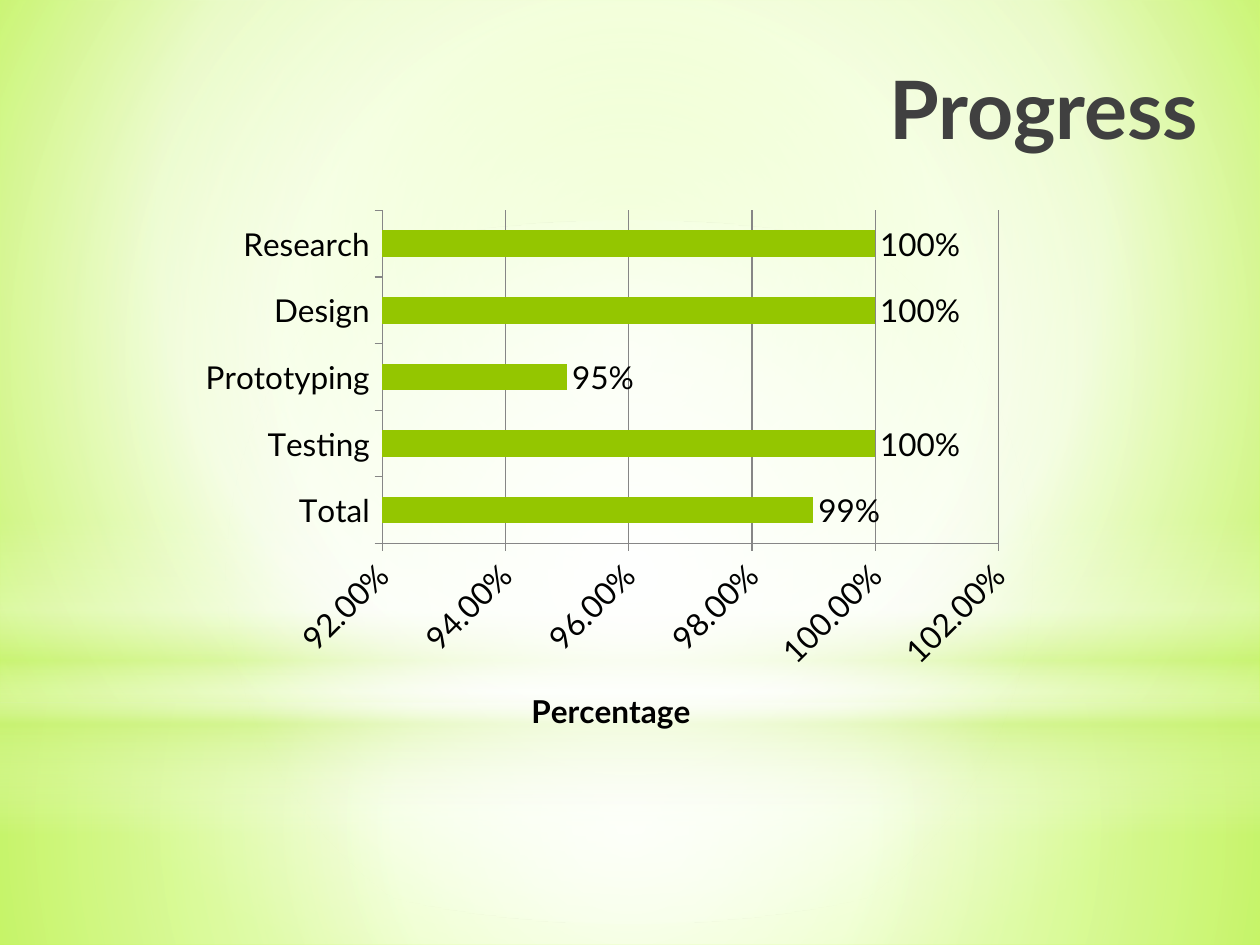
from typing import NamedTuple, Optional

from lxml import etree
from pptx import Presentation
from pptx.chart.data import CategoryChartData
from pptx.dml.color import RGBColor
from pptx.enum.chart import XL_CHART_TYPE, XL_LABEL_POSITION, XL_TICK_MARK
from pptx.enum.shapes import MSO_SHAPE
from pptx.enum.text import MSO_ANCHOR, PP_ALIGN
from pptx.oxml import parse_xml
from pptx.oxml.ns import nsdecls, qn
from pptx.util import Cm, Pt

FONT = "Lato"
GREEN, INK, BLACK, GRID = "94C600", "404040", "000000", "868686"
CENTRE = (50, 50, 50, 50)


class Stop(NamedTuple):
    pos: int
    color: str
    alpha: int = 100


class Glow(NamedTuple):
    shape: MSO_SHAPE
    top: float
    height: float
    stops: list[Stop]
    focus: Optional[tuple[int, int, int, int]] = CENTRE  # None: vertical gradient


GLOWS = [
    Glow(MSO_SHAPE.RECTANGLE, 14.17, 4.88,
         [Stop(0, "FFFFFF", 91), Stop(37, "FFFFFF", 76), Stop(100, "CAF278", 79)]),
    Glow(MSO_SHAPE.RECTANGLE, 0, 14.17,
         [Stop(0, "FFFFFF", 89), Stop(48, "FFFFFF", 62), Stop(100, "CAF278", 79)]),
    Glow(MSO_SHAPE.RECTANGLE, 10.46, 6.35,
         [Stop(0, "FFFFFF", 0), Stop(29, "FFFFFF", 30), Stop(45, "CAF278", 40),
          Stop(55, "FFFFFF", 26), Stop(65, "CAF278", 60), Stop(100, "FFFFFF", 0)], None),
    Glow(MSO_SHAPE.OVAL, 4.45, 14.17, [Stop(0, "FFFFFF"), Stop(56, "FFFFFF", 0)]),
]
PROGRESS = {"Total": 0.99, "Testing": 1, "Prototyping": 0.95, "Design": 1, "Research": 1}


def rgb(color: str) -> RGBColor:
    return RGBColor.from_string(color)


def set_gradient(parent, stops: list[Stop], focus) -> None:
    """Replace the solid fill inside parent with a gradient."""
    gs = "".join(
        f'<a:gs pos="{st.pos * 1000}"><a:srgbClr val="{st.color}">'
        f'<a:alpha val="{st.alpha * 1000}"/></a:srgbClr></a:gs>' for st in stops)
    if focus:
        sides = " ".join(f'{k}="{v * 1000}"' for k, v in zip("ltrb", focus))
        way = f'<a:path path="circle"><a:fillToRect {sides}/></a:path>'
    else:
        way = '<a:lin ang="5400000" scaled="0"/>'
    grad = parse_xml(f'<a:gradFill {nsdecls("a")} rotWithShape="1">'
                     f'<a:gsLst>{gs}</a:gsLst>{way}</a:gradFill>')
    parent.replace(parent.find(qn("a:solidFill")), grad)


def add_glow(s, glow: Glow, width: int) -> None:
    sp = s.shapes.add_shape(glow.shape, 0, Cm(glow.top), width, Cm(glow.height))
    sp.shadow.inherit = False
    sp.line.fill.background()
    sp.fill.solid()
    set_gradient(sp._element.spPr, glow.stops, glow.focus)


def style_font(font, size: float, color: str, bold: bool = False) -> None:
    font.name, font.size, font.bold = FONT, Pt(size), bold
    font.color.rgb = rgb(color)


def manual_layout(inner: bool = False, **values: float):
    """Build a chart layout from fractions of the chart's size."""
    layout = parse_xml(f'<c:layout {nsdecls("c")}><c:manualLayout/></c:layout>')
    settings = {"layoutTarget": "inner"} if inner else {}
    settings |= {"xMode": "edge", "yMode": "edge", **values}
    for tag, value in settings.items():
        etree.SubElement(layout[0], qn(f"c:{tag}")).set("val", str(value))
    return layout


def add_title(s, text: str) -> None:
    sp = s.shapes.title
    sp.left, sp.top, sp.width, sp.height = Cm(7.82), Cm(1.07), Cm(16.59), Cm(2.39)
    s.shapes._spTree.append(sp._element)  # in front of the glows
    tf = sp.text_frame
    tf.vertical_anchor = MSO_ANCHOR.TOP
    p = tf.paragraphs[0]
    p.alignment = PP_ALIGN.RIGHT
    r = p.add_run()
    r.text = text
    style_font(r.font, 46, INK, True)


def add_progress_chart(s) -> None:
    data = CategoryChartData(number_format="0%")
    data.categories = list(PROGRESS)
    data.add_series("Series 1", list(PROGRESS.values()))
    chart = s.shapes.add_chart(XL_CHART_TYPE.BAR_CLUSTERED, Cm(3.79), Cm(4.02),
                               Cm(17.02), Cm(11.19), data).chart
    chart.has_legend = chart.has_title = False
    style_font(chart.font, 18, BLACK)

    # Bars and their labels
    plot = chart.plots[0]
    plot.gap_width, plot.vary_by_categories = 150, False
    fill = plot.series[0].format.fill
    fill.solid()
    fill.fore_color.rgb = rgb(GREEN)
    labels = plot.series[0].data_labels
    labels.show_value = True
    labels.position = XL_LABEL_POSITION.OUTSIDE_END
    labels.number_format, labels.number_format_is_linked = "0%", False
    style_font(labels.font, 18, BLACK)

    # Axes
    axis = chart.value_axis
    axis.minimum_scale, axis.maximum_scale, axis.major_unit = 0.92, 1.02, 0.02
    axis.has_major_gridlines = True
    axis.tick_labels.number_format = "0.00%"
    axis.tick_labels.number_format_is_linked = False
    for ax in (axis, chart.category_axis):
        ax.major_tick_mark = XL_TICK_MARK.OUTSIDE
        style_font(ax.tick_labels.font, 18, BLACK)
        ax.format.line.color.rgb = rgb(GRID)
    axis.major_gridlines.format.line.color.rgb = rgb(GRID)
    axis._element.find(qn("c:txPr")).find(qn("a:bodyPr")).set("rot", "-2700000")
    r = axis.axis_title.text_frame.paragraphs[0].add_run()
    r.text = "Percentage"
    style_font(r.font, 18, BLACK, True)

    # Places of the axis title and the plot
    title = axis.axis_title._element
    for old in title.findall(qn("c:layout")):
        title.remove(old)
    title.find(qn("c:tx")).addnext(manual_layout(x=0.4, y=0.87))
    area = chart._chartSpace.chart.plotArea
    for old in area.findall(qn("c:layout")):
        area.remove(old)
    area.insert(0, manual_layout(True, x=0.23, y=0.02, w=0.73, h=0.6))


def main() -> None:
    prs = Presentation()
    prs.slide_width, prs.slide_height = Cm(25.4), Cm(19.05)
    s = prs.slides.add_slide(prs.slide_layouts[5])
    s.background.fill.solid()
    set_gradient(s._element.cSld.bg.bgPr,
                 [Stop(0, "CAFF60"), Stop(60, "F7FFE7"), Stop(100, "B7FF29")],
                 (20, 10, 20, 60))
    for glow in GLOWS:
        add_glow(s, glow, prs.slide_width)
    add_title(s, "Progress")
    add_progress_chart(s)
    prs.save("out.pptx")


if __name__ == "__main__":
    main()
